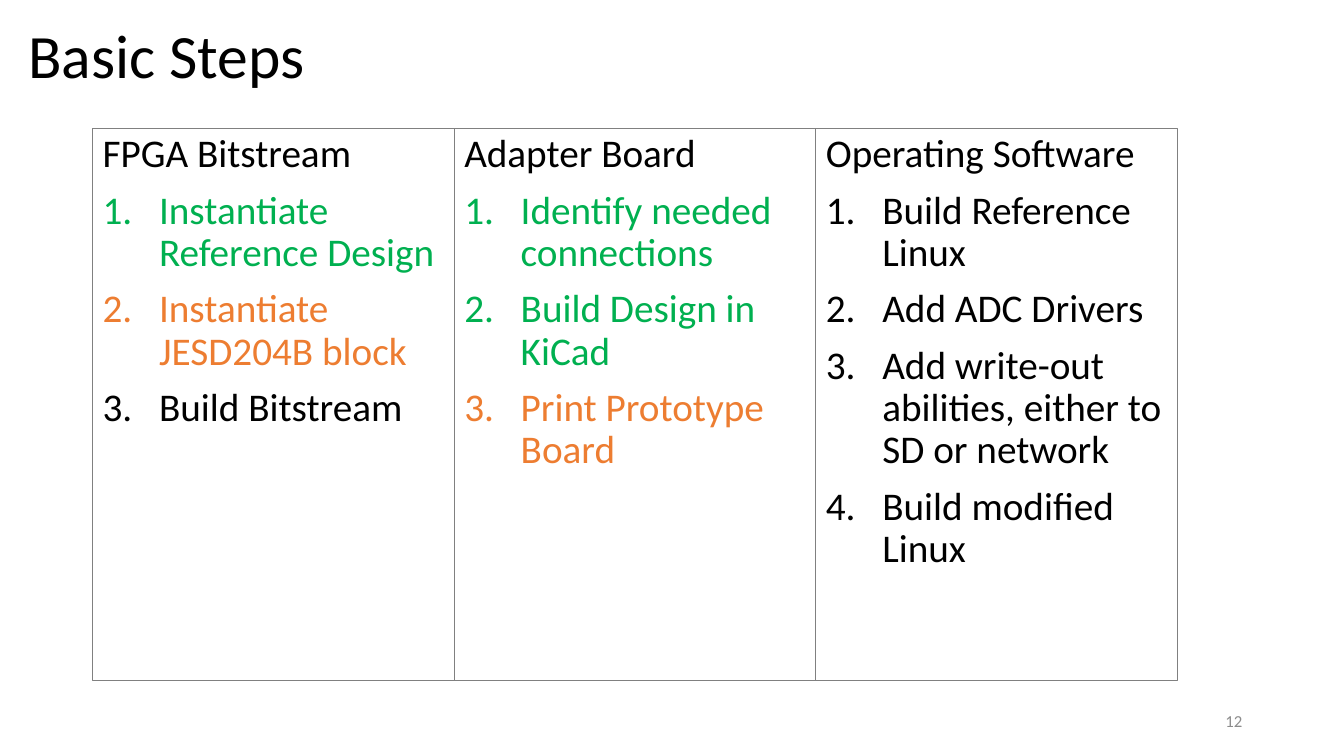
import pptx
import pptx.dml.color
import pptx.enum.shapes
import pptx.enum.text
import pptx.oxml
import pptx.oxml.ns
import pptx.util

Inches = pptx.util.Inches
Pt = pptx.util.Pt
RGBColor = pptx.dml.color.RGBColor
ALIGN = pptx.enum.text.PP_ALIGN
ANCHOR = pptx.enum.text.MSO_ANCHOR

BLACK = RGBColor(0x00, 0x00, 0x00)
DONE = RGBColor(0x00, 0xB0, 0x50)
ACTIVE = RGBColor(0xED, 0x7D, 0x31)
BORDER = RGBColor(0x80, 0x80, 0x80)
NUMBER_GRAY = RGBColor(0x8C, 0x8C, 0x8C)

FONT = "Calibri"
STEP_INDENT = Inches(0.56)

# Regions: left, top, width, height in inches
TITLE_BOX = (0.18, 0.06, 10.35, 1.04)
TRACKS_BOX = (0.92, 1.28, 10.76, 5.47)
NUMBER_BOX = (9.42, 6.95, 3, 0.4)

TRACKS = [
    ("FPGA Bitstream", [
        ("Instantiate Reference Design", DONE),
        ("Instantiate JESD204B block", ACTIVE),
        ("Build Bitstream", BLACK),
    ]),
    ("Adapter Board", [
        ("Identify needed connections", DONE),
        ("Build Design in KiCad", DONE),
        ("Print Prototype Board", ACTIVE),
    ]),
    ("Operating Software", [
        ("Build Reference Linux", BLACK),
        ("Add ADC Drivers", BLACK),
        ("Add write-out abilities, either to SD or network", BLACK),
        ("Build modified Linux", BLACK),
    ]),
]


def add_span(para, text, size, color):
    span = para.add_run()
    span.text = text
    span.font.name = FONT
    span.font.size = Pt(size)
    span.font.color.rgb = color


def number_paragraph(para):
    """Give the paragraph automatic numbering with a hanging indent."""
    properties = para._p.get_or_add_pPr()
    properties.set("marL", str(STEP_INDENT))
    properties.set("indent", str(-STEP_INDENT))
    numbering = pptx.oxml.parse_xml(
        f'<a:buAutoNum {pptx.oxml.ns.nsdecls("a")} type="arabicPeriod"/>')
    properties.append(numbering)


def add_title(page, box, text):
    title = page.shapes.title
    title.left, title.top, title.width, title.height = map(Inches, box)
    frame = title.text_frame
    frame.word_wrap = True
    frame.auto_size = pptx.enum.text.MSO_AUTO_SIZE.NONE
    frame.vertical_anchor = ANCHOR.MIDDLE
    para = frame.paragraphs[0]
    para.alignment = ALIGN.LEFT
    para.line_spacing = 0.9
    add_span(para, text, 44, BLACK)


def add_track(page, box, heading, steps):
    """Draw one bordered column: a heading above its numbered steps."""
    column = page.shapes.add_shape(
        pptx.enum.shapes.MSO_SHAPE.RECTANGLE, *map(Inches, box))
    column.shadow.inherit = False
    column.fill.background()
    column.line.color.rgb = BORDER
    column.line.width = Pt(0.75)
    frame = column.text_frame
    frame.word_wrap = True
    frame.vertical_anchor = ANCHOR.TOP

    for index, (text, color) in enumerate([(heading, BLACK)] + steps):
        para = frame.add_paragraph() if index else frame.paragraphs[0]
        para.alignment = ALIGN.LEFT
        para.line_spacing = 0.9
        if index:
            para.space_before = Pt(10)
            number_paragraph(para)
        add_span(para, text, 28, color)


def add_tracks(page, box, tracks):
    """Split the box into equal columns, one for each track."""
    left, top, width, height = box
    column_width = width / len(tracks)
    for index, (heading, steps) in enumerate(tracks):
        column_box = (left + index * column_width, top, column_width, height)
        add_track(page, column_box, heading, steps)


def add_page_number(page, box, number):
    frame = page.shapes.add_textbox(*map(Inches, box)).text_frame
    frame.word_wrap = True
    frame.vertical_anchor = ANCHOR.MIDDLE
    para = frame.paragraphs[0]
    para.alignment = ALIGN.RIGHT
    add_span(para, number, 12, NUMBER_GRAY)


def main():
    deck = pptx.Presentation()
    deck.slide_width = Inches(13.33)
    deck.slide_height = Inches(7.5)
    page = deck.slides.add_slide(deck.slide_layouts.get_by_name("Title Only"))
    add_title(page, TITLE_BOX, "Basic Steps")
    add_tracks(page, TRACKS_BOX, TRACKS)
    add_page_number(page, NUMBER_BOX, "12")
    deck.save("out.pptx")


if __name__ == "__main__":
    main()
